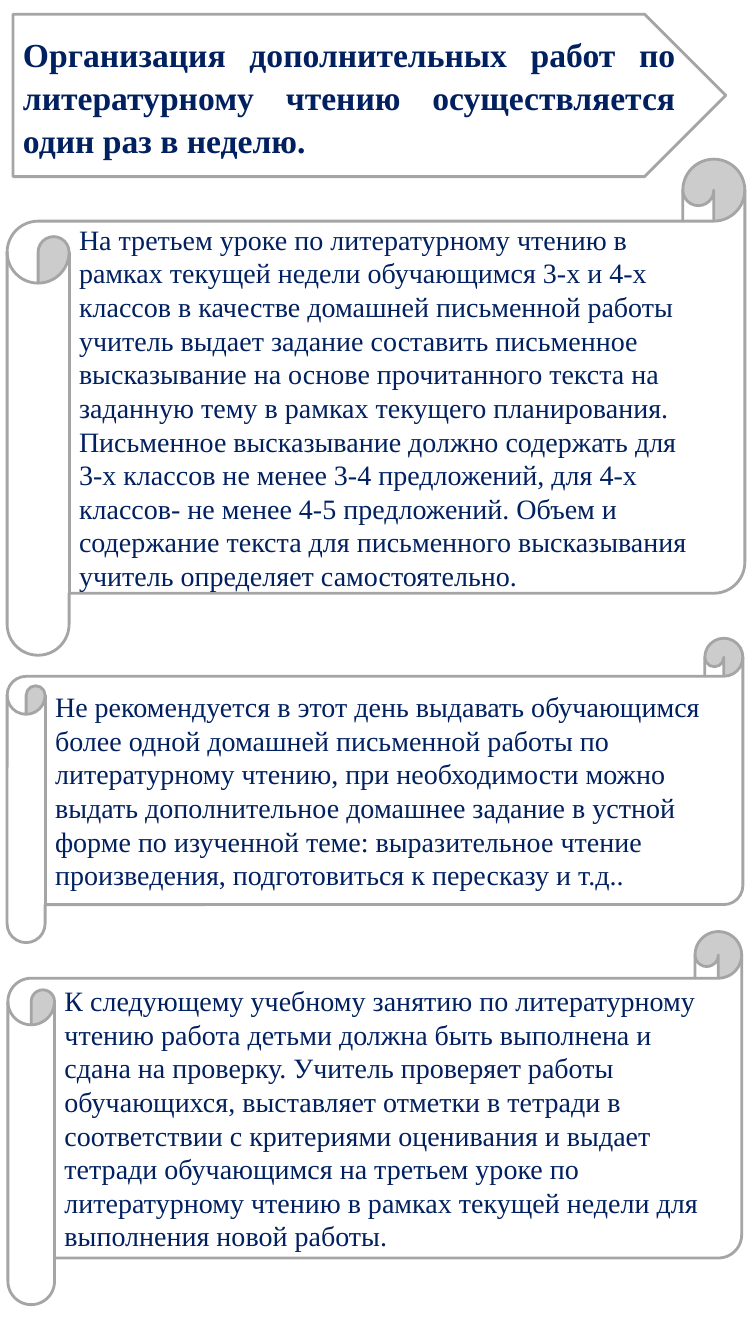
from pptx import Presentation
from pptx.dml.color import RGBColor
from pptx.enum.shapes import MSO_SHAPE as SHAPE
from pptx.enum.text import MSO_ANCHOR as ANCHOR, PP_ALIGN as ALIGN
from pptx.util import Cm, Pt

FONT = "Times New Roman"
NAVY = "002060"
GREY = "A5A5A5"
WHITE = "FFFFFF"

HEADING = (
    "Организация дополнительных работ по литературному чтению "
    "осуществляется один раз в неделю."
)

SCROLLS = [
    (0.18, 4.01, 18.59, 12.5,
     "На третьем уроке по литературному чтению в рамках текущей недели "
     "обучающимся 3-х и 4-х классов в качестве домашней письменной работы "
     "учитель выдает задание составить письменное высказывание на основе "
     "прочитанного текста на заданную тему в рамках текущего планирования. "
     "Письменное высказывание должно содержать для 3-х классов не менее "
     "3-4 предложений, для 4-х классов- не менее 4-5 предложений. Объем и "
     "содержание текста для письменного высказывания учитель определяет "
     "самостоятельно."),
    (0.18, 16.08, 18.54, 7.67,
     "Не рекомендуется в этот день выдавать обучающимся более одной домашней "
     "письменной работы по литературному чтению, при необходимости можно "
     "выдать дополнительное домашнее задание в устной форме по изученной "
     "теме: выразительное чтение произведения, подготовиться к пересказу "
     "и т.д.."),
    (0.2, 23.47, 18.49, 9.4,
     "К следующему учебному занятию по литературному чтению работа детьми "
     "должна быть выполнена и сдана на проверку. Учитель проверяет работы "
     "обучающихся, выставляет отметки в тетради в соответствии с критериями "
     "оценивания и выдает тетради обучающимся на третьем уроке по "
     "литературному чтению в рамках текущей недели для выполнения новой "
     "работы."),
]


def paint(color_format, value):
    color_format.rgb = RGBColor.from_string(value)


def add_panel(slide, kind, left, top, width, height, text, size, bold=False):
    sp = slide.shapes.add_shape(kind, Cm(left), Cm(top), Cm(width), Cm(height))
    sp.shadow.inherit = False
    sp.fill.solid()
    paint(sp.fill.fore_color, WHITE)
    paint(sp.line.color, GREY)
    sp.line.width = Pt(2)
    tf = sp.text_frame
    tf.word_wrap = True
    tf.vertical_anchor = ANCHOR.MIDDLE
    tf.text = text
    p = tf.paragraphs[0]
    p.alignment = ALIGN.LEFT
    font = p.runs[0].font
    font.name = FONT
    font.size = Pt(size)
    font.bold = bold
    paint(font.color, NAVY)
    return p


def add_heading(slide):
    p = add_panel(slide, SHAPE.PENTAGON, 0.33, 0.36, 17.96, 4.09, HEADING, 24, bold=True)
    p.alignment = ALIGN.JUSTIFY
    p.line_spacing = 1.07
    p.space_after = Pt(8)


def main():
    prs = Presentation()
    prs.slide_width = Cm(19.05)
    prs.slide_height = Cm(33.86)
    slide = prs.slides.add_slide(prs.slide_layouts[6])
    add_heading(slide)
    for left, top, width, height, text in SCROLLS:
        add_panel(slide, SHAPE.HORIZONTAL_SCROLL, left, top, width, height, text, 20)
    prs.save("out.pptx")


if __name__ == "__main__":
    main()
